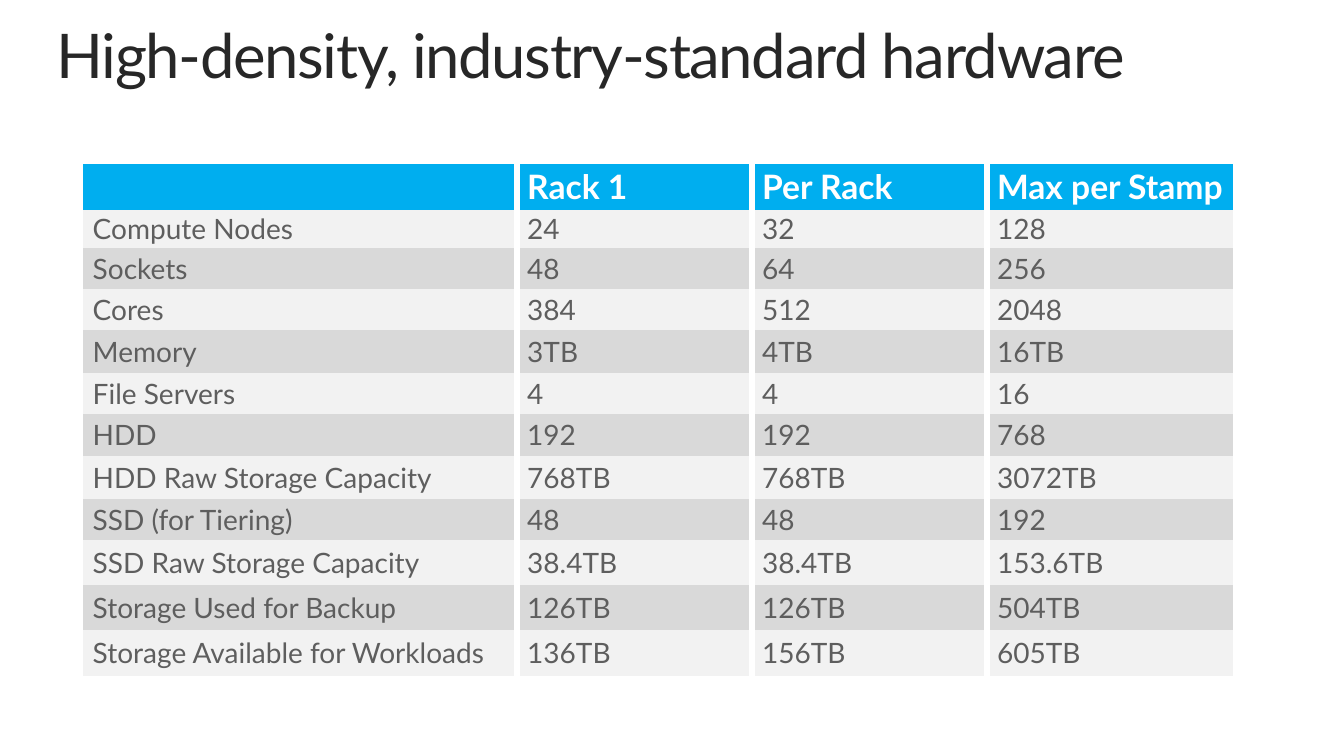
"""Build a slide with a table of rack hardware figures."""
from dataclasses import dataclass

from lxml.etree import SubElement
from pptx import Presentation
from pptx.dml.color import RGBColor
from pptx.enum.text import MSO_ANCHOR as Anchor, MSO_AUTO_SIZE as AutoSize, PP_ALIGN as Align
from pptx.oxml import parse_xml
from pptx.oxml.ns import nsdecls, qn
from pptx.util import Inches, Pt

WIDTH, HEIGHT = Inches(13.33), Inches(7.5)
FONT = "Lato"
NO_STYLE = "{2D5ABB26-0587-4C30-8999-92F81FD0307C}"
COLUMN_SHARES = (32.33, 17.48, 17.48, 18.3)


@dataclass(frozen=True)
class RowStyle:
    """Look of one kind of table row."""
    fill: str
    color: str
    size: int
    bold: bool = False


@dataclass(frozen=True)
class HardwareRow:
    """Row height as a percentage of the slide, and its cell texts."""
    height: float
    cells: tuple[str, str, str, str]


HEADER = RowStyle("00AEEF", "FFFFFF", 24, True)
BANDS = (RowStyle("D9D9D9", "5E5E5E", 20), RowStyle("F2F2F2", "5E5E5E", 20))

ROWS = (
    HardwareRow(6, ("", "Rack 1", "Per Rack", "Max per Stamp")),
    HardwareRow(5.07, ("Compute Nodes", "24", "32", "128")),
    HardwareRow(5.47, ("Sockets", "48", "64", "256")),
    HardwareRow(5.4, ("Cores", "384", "512", "2048")),
    HardwareRow(5.73, ("Memory", "3TB", "4TB", "16TB")),
    HardwareRow(5.4, ("File Servers", "4", "4", "16")),
    HardwareRow(5.47, ("HDD", "192", "192", "768")),
    HardwareRow(5.73, ("HDD Raw Storage Capacity", "768TB", "768TB", "3072TB")),
    HardwareRow(5.4, ("SSD (for Tiering)", "48", "48", "192")),
    HardwareRow(6, ("SSD Raw Storage Capacity", "38.4TB", "38.4TB", "153.6TB")),
    HardwareRow(6, ("Storage Used for Backup", "126TB", "126TB", "504TB")),
    HardwareRow(6, ("Storage Available for Workloads", "136TB", "156TB", "605TB")),
)


def x(percent: float) -> int:
    """Convert a percentage of the slide width to a length."""
    return round(WIDTH * percent / 100)


def y(percent: float) -> int:
    """Convert a percentage of the slide height to a length."""
    return round(HEIGHT * percent / 100)


def rgb(color: str) -> RGBColor:
    """Convert a hex string to a colour."""
    return RGBColor.from_string(color)


def style_font(p, size: int, color: str, bold: bool = False) -> None:
    """Set the font of a whole paragraph."""
    p.font.name, p.font.size, p.font.bold = FONT, Pt(size), bold
    p.font.color.rgb = rgb(color)


def add_title(s, text: str) -> None:
    """Place and format the slide title."""
    sp = s.shapes.title
    sp.left, sp.top, sp.width, sp.height = x(4.2), y(3.33), x(91.6), y(8.93)
    tf = sp.text_frame
    tf.text = text
    tf.word_wrap, tf.auto_size = True, AutoSize.SHAPE_TO_FIT_TEXT
    tf.vertical_anchor = Anchor.TOP
    tf.margin_left = tf.margin_right = tf.margin_top = tf.margin_bottom = 0
    p = tf.paragraphs[0]
    p.alignment, p.line_spacing = Align.LEFT, 0.9
    style_font(p, 44, "272727")
    for r in p.runs:
        r.font.size = Pt(44)
        r._r.get_or_add_rPr().set("spc", "-100")


def add_dividers(cell, sides: list[str]) -> None:
    """Draw white vertical borders on the given sides of a cell."""
    tc_pr = cell._tc.get_or_add_tcPr()
    for i, side in enumerate(sides):
        ln = parse_xml(f'<a:ln{side} {nsdecls("a")} w="{Pt(4.5)}"/>')
        SubElement(SubElement(ln, qn("a:solidFill")), qn("a:srgbClr")).set("val", "FFFFFF")
        tc_pr.insert(i, ln)


def fill_cell(cell, text: str, style: RowStyle) -> None:
    """Write and format one table cell."""
    cell.text = text
    cell.vertical_anchor = Anchor.MIDDLE
    cell.margin_left = cell.margin_right = Inches(0.1)
    cell.margin_top = cell.margin_bottom = 0
    cell.fill.solid()
    cell.fill.fore_color.rgb = rgb(style.fill)
    style_font(cell.text_frame.paragraphs[0], style.size, style.color, style.bold)


def add_hardware_table(s, rows: tuple[HardwareRow, ...]) -> None:
    """Draw the banded table with white column dividers."""
    last = len(COLUMN_SHARES) - 1
    frame = s.shapes.add_table(len(rows), last + 1, x(6.15), y(21.73),
                               x(sum(COLUMN_SHARES)), y(sum(row.height for row in rows)))
    table = frame.table
    table._tbl.tblPr.find(qn("a:tableStyleId")).text = NO_STYLE
    for column, share in zip(table.columns, COLUMN_SHARES):
        column.width = x(share)
    for i, row in enumerate(rows):
        table.rows[i].height = y(row.height)
        style = BANDS[i % 2] if i else HEADER
        for j, text in enumerate(row.cells):
            cell = table.cell(i, j)
            fill_cell(cell, text, style)
            add_dividers(cell, ["L"] * (j > 0) + ["R"] * (j < last))


def main() -> None:
    """Build and save the slide."""
    prs = Presentation()
    prs.slide_width, prs.slide_height = WIDTH, HEIGHT
    s = prs.slides.add_slide(prs.slide_layouts[5])
    add_title(s, "High-density, industry-standard hardware")
    add_hardware_table(s, ROWS)
    prs.save("out.pptx")


if __name__ == "__main__":
    main()
